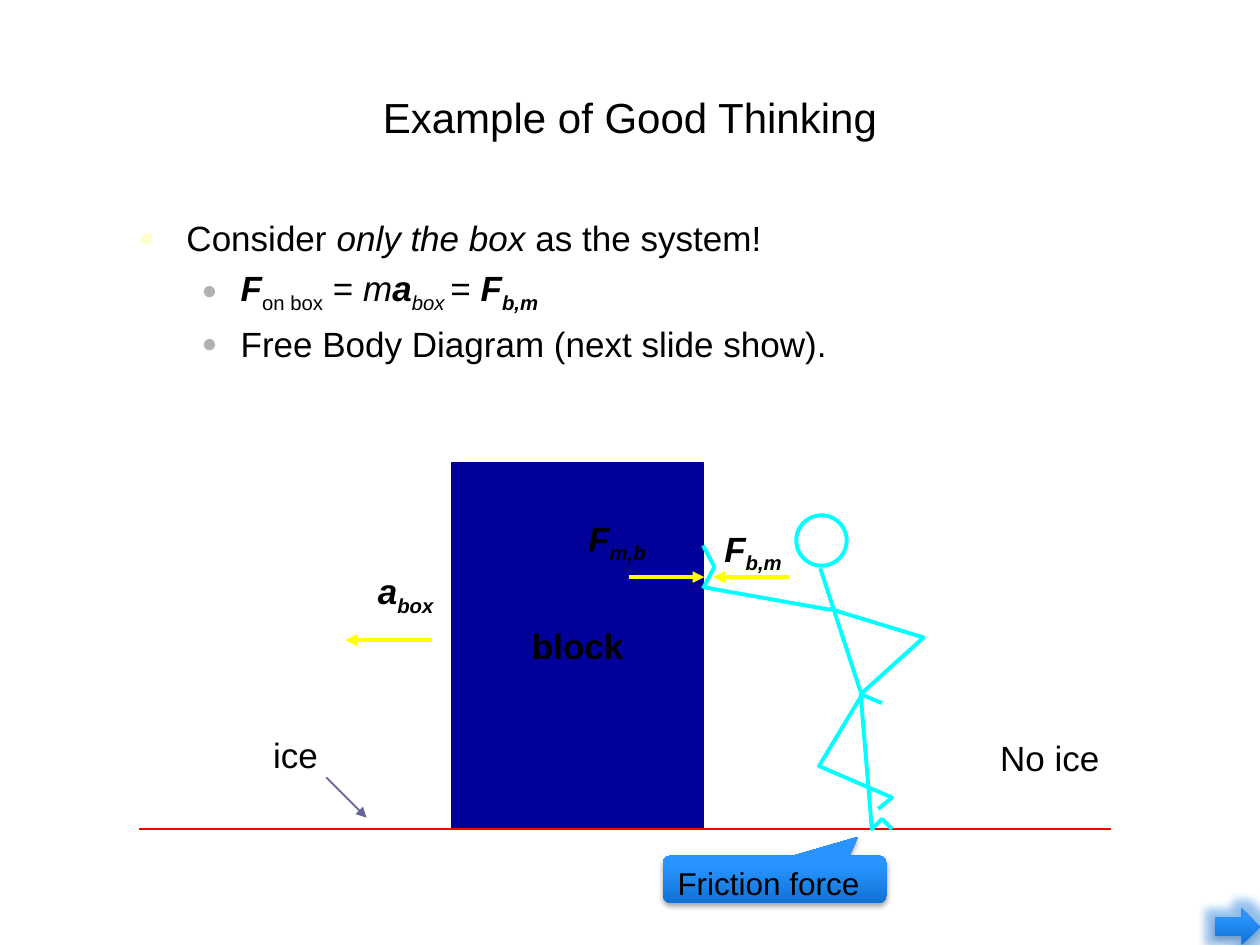
from lxml.etree import SubElement
from pptx import Presentation
from pptx.dml.color import RGBColor
from pptx.enum.shapes import MSO_CONNECTOR, MSO_SHAPE
from pptx.enum.text import MSO_ANCHOR, MSO_AUTO_SIZE, PP_ALIGN
from pptx.oxml.ns import qn
from pptx.util import Inches, Pt

BLACK = RGBColor(0, 0, 0)
NAVY = RGBColor(0x01, 0x01, 0x99)
YELLOW = RGBColor(0xFF, 0xFF, 0)
RED = RGBColor(0xFC, 0, 0)
CYAN = RGBColor(0, 0xFF, 0xFF)
SLATE = RGBColor(0x66, 0x66, 0x99)
DEEP = RGBColor(0x0F, 0x72, 0xD5)
SKY = RGBColor(0x29, 0x94, 0xFF)
CREAM = RGBColor(0xFF, 0xFF, 0xCC)
GRAY = RGBColor(0xB2, 0xB2, 0xB2)


def apply(item, **values):
    for name, value in values.items():
        setattr(item, name, value)


def node(parent, tag, **attrs):
    return SubElement(parent, qn(tag), {k: str(v) for k, v in attrs.items()})


def place(shape, box):
    apply(shape, **dict(zip(("left", "top", "width", "height"), map(Inches, box))))


def write(para, runs, size=20):
    """Add (text, style) runs; style letters: b bold, i italic, s subscript."""
    for text, style in runs:
        run = para.add_run()
        run.text = text
        apply(run.font, name="Arial", size=Pt(size), bold="b" in style, italic="i" in style)
        run.font.color.rgb = BLACK
        if "s" in style:
            run._r.get_or_add_rPr().set("baseline", "-25000")


def stroke(line, color, width):
    line.color.rgb = color
    line.width = Pt(width)


def line(slide, start, end, color, width=2.25, arrow=False):
    link = slide.shapes.add_connector(MSO_CONNECTOR.STRAIGHT, *map(Inches, start + end))
    stroke(link.line, color, width)
    if arrow:
        node(link.line._get_or_add_ln(), "a:tailEnd", type="triangle")
    node(link._element.spPr, "a:effectLst")


def sketch(slide, points):
    """Open cyan outline through the points."""
    dots = [tuple(map(Inches, p)) for p in points]
    pen = slide.shapes.build_freeform(*dots[0])
    pen.add_line_segments(dots[1:], close=False)
    shape = pen.convert_to_shape()
    shape.fill.background()
    shape.shadow.inherit = False
    stroke(shape.line, CYAN, 2.25)


def label(slide, box, runs, wrap=False, space=0.9):
    frame = slide.shapes.add_textbox(*map(Inches, box)).text_frame
    apply(frame, word_wrap=wrap, auto_size=MSO_AUTO_SIZE.SHAPE_TO_FIT_TEXT)
    frame.paragraphs[0].line_spacing = space
    write(frame.paragraphs[0], runs)


def glossy(slide, kind, box, glow=False):
    """Blue gradient shape with a soft shadow."""
    shape = slide.shapes.add_shape(kind, *map(Inches, box))
    shape.line.fill.background()
    shape.fill.gradient()
    shape.fill.gradient_angle = 90
    for stop, color, spot in zip(shape.fill.gradient_stops, (DEEP, SKY), (0, 0.8)):
        stop.color.rgb = color
        stop.position = spot
    effects = node(shape._element.spPr, "a:effectLst")
    if glow:
        halo = node(node(effects, "a:glow", rad=Inches(0.14)), "a:srgbClr", val=SKY)
        node(halo, "a:alpha", val=40000)
    cast = node(effects, "a:outerShdw", blurRad=Pt(3.1), dist=Pt(1.8),
                dir=5400000, rotWithShape=0)
    node(node(cast, "a:srgbClr", val=BLACK), "a:alpha", val=35000)
    return shape


def title(slide, box):
    shape = slide.shapes.title
    place(shape, box)
    shape.text_frame.vertical_anchor = MSO_ANCHOR.MIDDLE
    para = shape.text_frame.paragraphs[0]
    para.alignment = PP_ALIGN.CENTER
    write(para, [("Example of Good Thinking", "")], 24)


def points(slide, box):
    items = [
        (0, [("Consider ", ""), ("only the box ", "i"), ("as the system!", "")]),
        (1, [("F", "bi"), ("on box", "s"), (" = ", ""), ("m", "i"), ("a", "bi"),
             ("box ", "is"), ("= ", ""), ("F", "bi"), ("b,m", "bis")]),
        (1, [("Free Body Diagram (next slide show).", "")]),
    ]
    shape = slide.placeholders[1]
    place(shape, box)
    frame = shape.text_frame
    frame.auto_size = MSO_AUTO_SIZE.NONE
    for num, (level, runs) in enumerate(items):
        para = frame.add_paragraph() if num else frame.paragraphs[0]
        apply(para, level=level, space_before=Pt(4.6))
        color, left, hang = ((CREAM, 0.38, 0.38), (GRAY, 0.81, 0.31))[level]
        props = para._p.get_or_add_pPr()
        props.set("marL", str(Inches(left)))
        props.set("indent", str(-Inches(hang)))
        node(node(props, "a:buClr"), "a:srgbClr", val=color)
        node(props, "a:buSzPct", val=75000)
        node(props, "a:buFont", typeface="Arial")
        node(props, "a:buChar", char="●")
        write(para, runs)


def scene(slide, left, top):
    def at(x, y, *size):
        return (left + x, top + y, *size)

    # Block and ground
    block = slide.shapes.add_shape(MSO_SHAPE.RECTANGLE, *map(Inches, at(2.49, 0, 1.99, 2.9)))
    block.shadow.inherit = False
    block.fill.solid()
    block.fill.fore_color.rgb = NAVY
    stroke(block.line, NAVY, 1)
    apply(block.text_frame, word_wrap=False, vertical_anchor=MSO_ANCHOR.MIDDLE)
    para = block.text_frame.paragraphs[0]
    para.alignment = PP_ALIGN.CENTER
    write(para, [("block", "b")])
    line(slide, at(0, 2.91), at(7.72, 2.91), RED, 1.5)

    # Person pushing
    head = slide.shapes.add_shape(MSO_SHAPE.OVAL, *map(Inches, at(5.22, 0.42, 0.4, 0.4)))
    head.shadow.inherit = False
    head.fill.background()
    stroke(head.line, CYAN, 2.25)
    line(slide, at(5.41, 0.84), at(5.73, 1.82), CYAN)
    line(slide, at(5.49, 1.17), at(4.48, 0.99), CYAN)
    limbs = [
        [(4.48, 1), (4.57, 0.83), (4.48, 0.66)],
        [(5.48, 1.16), (6.23, 1.39), (5.73, 1.84), (5.9, 1.91)],
        [(5.73, 1.83), (5.82, 2.91), (5.9, 2.83), (5.98, 2.91)],
        [(5.75, 1.83), (5.4, 2.41), (5.98, 2.66), (5.87, 2.75)],
    ]
    for limb in limbs:
        sketch(slide, [at(*p) for p in limb])

    # Acceleration and force arrows
    for start, end, y in ((2.33, 1.64, 1.41), (5.16, 4.56, 0.91), (3.89, 4.49, 0.91)):
        line(slide, at(start, y), at(end, y), YELLOW, arrow=True)
    line(slide, at(1.49, 2.5), at(1.81, 2.82), SLATE, 1, True)

    # Labels
    for x, y, width, main, sub in ((1.8, 0.81, 0.69, "a", "box"),
                                   (3.47, 0.39, 0.7, "F", "m,b"),
                                   (4.55, 0.47, 0.7, "F", "b,m")):
        label(slide, at(x, y, width, 0.4), [(main, "bi"), (sub, "bis")])
    label(slide, at(0.97, 2.14, 0.56, 0.4), [("ice", "")])
    label(slide, at(6.74, 2.13, 1.23, 0.44), [("No ice", "")], True, 1)

    # Friction callout
    note = glossy(slide, MSO_SHAPE.ROUNDED_RECTANGULAR_CALLOUT, at(4.16, 3.12, 1.78, 0.38))
    for num, value in enumerate((0.37, -0.89, 0.17)):
        note.adjustments[num] = value
    note.text_frame.vertical_anchor = MSO_ANCHOR.TOP
    para = note.text_frame.paragraphs[0]
    para.alignment = PP_ALIGN.LEFT
    write(para, [("Friction force", "")], 18)


def main():
    deck = Presentation()
    apply(deck, slide_width=Inches(10), slide_height=Inches(7.5))
    slide = deck.slides.add_slide(deck.slide_layouts[1])
    title(slide, (0.5, 0.3, 9, 1.25))
    points(slide, (1, 1.67, 7.83, 0.42))
    scene(slide, 1.1, 3.67)
    glossy(slide, MSO_SHAPE.RIGHT_ARROW, (9.64, 7.21, 0.36, 0.29), True)
    deck.save("out.pptx")


if __name__ == "__main__":
    main()
